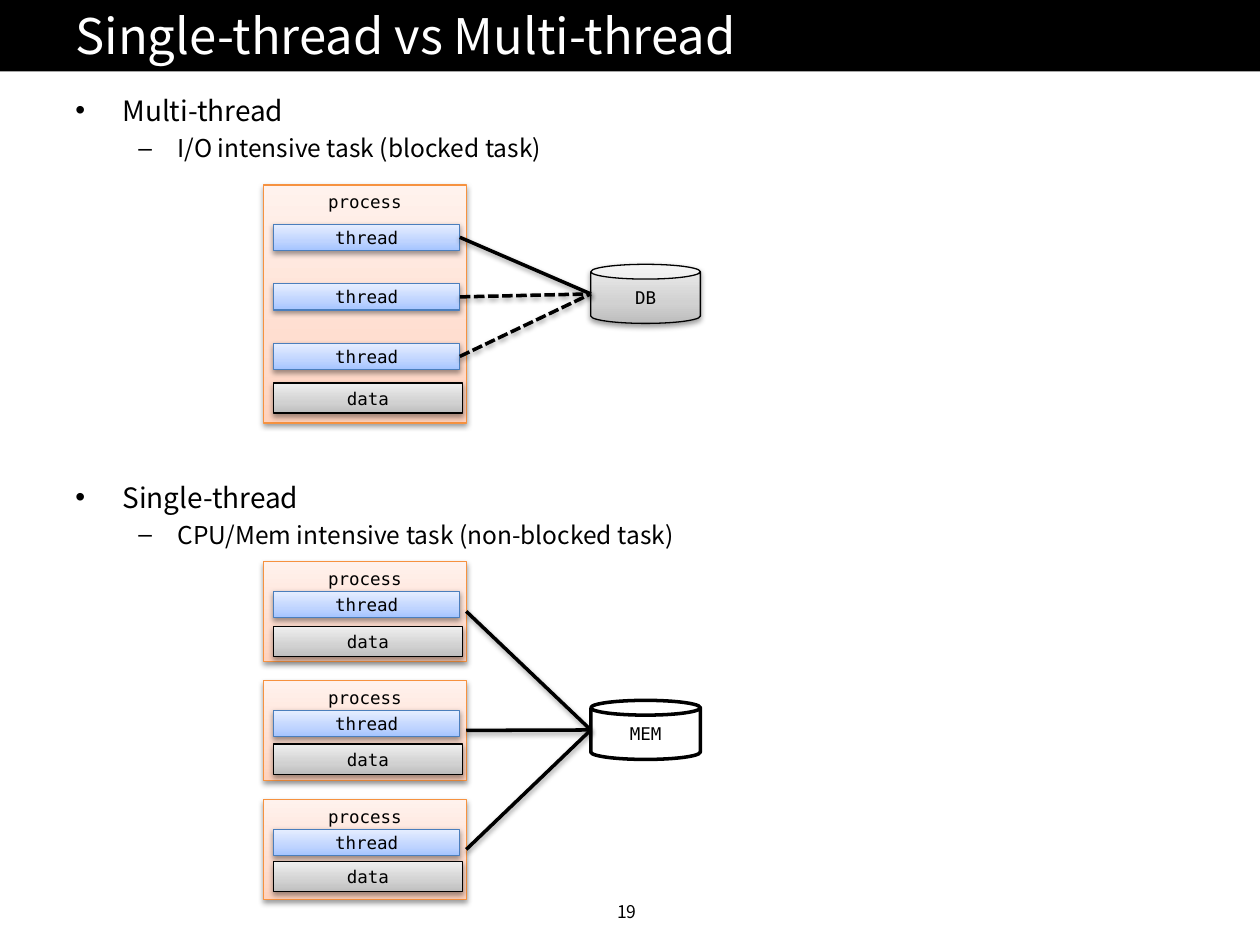
from copy import deepcopy

from lxml import etree
from pptx import Presentation
from pptx.dml.color import RGBColor
from pptx.enum.dml import MSO_LINE
from pptx.enum.shapes import MSO_CONNECTOR, MSO_SHAPE
from pptx.enum.text import MSO_ANCHOR, MSO_AUTO_SIZE, PP_ALIGN
from pptx.oxml.ns import qn
from pptx.util import Cm, Pt

RECT, CAN = MSO_SHAPE.RECTANGLE, MSO_SHAPE.CAN
STRAIGHT = MSO_CONNECTOR.STRAIGHT
DASH = MSO_LINE.SQUARE_DOT
TOP, MIDDLE = MSO_ANCHOR.TOP, MSO_ANCHOR.MIDDLE
LEFT, CENTER = PP_ALIGN.LEFT, PP_ALIGN.CENTER
NO_FIT = MSO_AUTO_SIZE.NONE

BLACK = RGBColor(0x00, 0x00, 0x00)
WHITE = RGBColor(0xFF, 0xFF, 0xFF)
ORANGE = RGBColor(0xF6, 0x92, 0x40)
BLUE = RGBColor(0x4B, 0x7E, 0xBC)
PEACH_SHADES = [RGBColor(0xFF, 0xD2, 0xBD), RGBColor(0xFF, 0xDE, 0xD0), RGBColor(0xFF, 0xF2, 0xED)]
BLUE_SHADES = [RGBColor(0xA4, 0xC4, 0xFF), RGBColor(0xBF, 0xD4, 0xFF), RGBColor(0xE6, 0xEE, 0xFF)]
GREY_SHADES = [RGBColor(0xBD, 0xBD, 0xBD), RGBColor(0xD1, 0xD1, 0xD1), RGBColor(0xEE, 0xEE, 0xEE)]

SANS, MONO = "Noto Sans CJK KR", "DejaVu Sans Mono"

# Looks of the diagram parts
STYLES = {
    "process": dict(kind=RECT, left=5.31, width=4.09, shades=PEACH_SHADES, line=ORANGE, weight=0.75, anchor=TOP),
    "thread": dict(kind=RECT, left=5.51, width=3.76, shades=BLUE_SHADES, line=BLUE, weight=0.75, anchor=MIDDLE),
    "data": dict(kind=RECT, left=5.51, width=3.81, shades=GREY_SHADES, line=BLACK, weight=0.75, anchor=MIDDLE),
    "DB": dict(kind=CAN, left=11.91, width=2.21, shades=GREY_SHADES, line=BLACK, weight=0.75, anchor=MIDDLE),
    "MEM": dict(kind=CAN, left=11.91, width=2.21, shades=None, line=BLACK, weight=2, anchor=MIDDLE),
}


def add_shadow(item):
    """Give a shape or connector a soft shadow just below it."""
    effects = etree.SubElement(item._element.spPr, qn("a:effectLst"))
    shadow = etree.SubElement(effects, qn("a:outerShdw"), blurRad="40000",
                              dist="20000", dir="5400000", rotWithShape="0")
    color = etree.SubElement(shadow, qn("a:srgbClr"), val="000000")
    etree.SubElement(color, qn("a:alpha"), val="38000")


def add_part(label, top, height):
    """Add a labelled part of the diagram in its style."""
    style = STYLES[label]
    part = slide.shapes.add_shape(style["kind"], Cm(style["left"]), Cm(top),
                                  Cm(style["width"]), Cm(height))
    part.line.color.rgb = style["line"]
    part.line.width = Pt(style["weight"])
    if style["shades"]:
        part.fill.gradient()
        part.fill.gradient_angle = 90
        first_stop = part._element.spPr.find(".//" + qn("a:gs"))
        first_stop.addnext(deepcopy(first_stop))
        for stop, position, shade in zip(part.fill.gradient_stops, (0, 0.35, 1), style["shades"]):
            stop.position = position
            stop.color.rgb = shade
        add_shadow(part)
    else:
        part.fill.solid()
        part.fill.fore_color.rgb = WHITE
        part.shadow.inherit = False
    frame = part.text_frame
    frame.word_wrap = False
    frame.vertical_anchor = style["anchor"]
    para = frame.paragraphs[0]
    para.alignment = CENTER
    span = para.add_run()
    span.text = label
    for name, value in dict(name=MONO, size=Pt(10)).items():
        setattr(span.font, name, value)
    span.font.color.rgb = BLACK
    return part


deck = Presentation()
deck.slide_width, deck.slide_height = Cm(25.4), Cm(19.05)
slide = deck.slides.add_slide(deck.slide_layouts[5])

# Title on a black bar
bar = slide.shapes.add_shape(RECT, 0, Cm(-0.08), Cm(25.4), Cm(1.52))
bar.fill.solid()
bar.fill.fore_color.rgb = BLACK
bar.line.fill.background()
bar.shadow.inherit = False

title = slide.shapes.title
slide.shapes._spTree.append(title._element)
title_format = dict(left=Cm(1.27), top=Cm(-0.08), width=Cm(24.13), height=Cm(1.57))
for name, value in title_format.items():
    setattr(title, name, value)
title.text_frame.text = "Single-thread vs Multi-thread"
title.text_frame.auto_size = NO_FIT
title.text_frame.vertical_anchor = MIDDLE
para = title.text_frame.paragraphs[0]
para.alignment = LEFT
for name, value in dict(name=SANS, size=Pt(28)).items():
    setattr(para.font, name, value)
para.font.color.rgb = WHITE

# Bulleted text: text, bullet, size, indent, hanging, space before
BULLETS = [
    ("Multi-thread", "•", 16, 0.95, 0.95, 0),
    ("I/O intensive task (blocked task)", "–", 14, 2.06, 0.79, 2),
    ("Single-thread", "•", 16, 0.95, 0.95, 183),
    ("CPU/Mem intensive task (non-blocked task)", "–", 14, 2.06, 0.79, 2),
]
body = slide.shapes.add_textbox(Cm(1.27), Cm(1.73), Cm(22.83), Cm(16.21))
body.text_frame.word_wrap = True
body.text_frame.margin_top = Cm(0.2)
for index, (text, bullet, size, indent, hanging, space) in enumerate(BULLETS):
    para = body.text_frame.paragraphs[0] if index == 0 else body.text_frame.add_paragraph()
    para.space_before = Pt(space)
    para.line_spacing = Pt(18)
    properties = para._p.get_or_add_pPr()
    properties.set("marL", str(Cm(indent)))
    properties.set("indent", str(-Cm(hanging)))
    etree.SubElement(properties, qn("a:buFont"), typeface="Arial")
    etree.SubElement(properties, qn("a:buChar"), char=bullet)
    span = para.add_run()
    span.text = text
    for name, value in dict(name=SANS, size=Pt(size)).items():
        setattr(span.font, name, value)
    span.font.color.rgb = BLACK

# One process with three threads waiting for the database
add_part("process", 3.73, 4.8)
threads = [add_part("thread", 4.52 + 1.2 * row, 0.53) for row in range(3)]
add_part("data", 7.72, 0.61)
database = add_part("DB", 5.33, 1.19)

# Three processes with one thread each sharing the memory
processes = []
for row in range(3):
    processes.append(add_part("process", 11.32 + 2.4 * row, 2.01))
    add_part("thread", 11.92 + 2.4 * row, 0.53)
    add_part("data", 12.63 + 2.37 * row, 0.61)
memory = add_part("MEM", 14.12, 1.19)

# Lines from each source to its store; only the first thread is active
links = [(part, database, row > 0) for row, part in enumerate(threads)]
links += [(part, memory, False) for part in processes]
for source, store, waiting in links:
    link = slide.shapes.add_connector(
        STRAIGHT, source.left + source.width, source.top + source.height // 2,
        store.left, store.top + store.height // 2)
    link.line.color.rgb = BLACK
    link.line.width = Pt(2)
    if waiting:
        link.line.dash_style = DASH
    add_shadow(link)

# Page number
page = slide.shapes.add_textbox(Cm(12.19), Cm(18.03), Cm(1.04), Cm(0.69))
page.text_frame.word_wrap = False
span = page.text_frame.paragraphs[0].add_run()
span.text = "19"
for name, value in dict(name=SANS, size=Pt(10)).items():
    setattr(span.font, name, value)
span.font.color.rgb = BLACK

deck.save("out.pptx")
